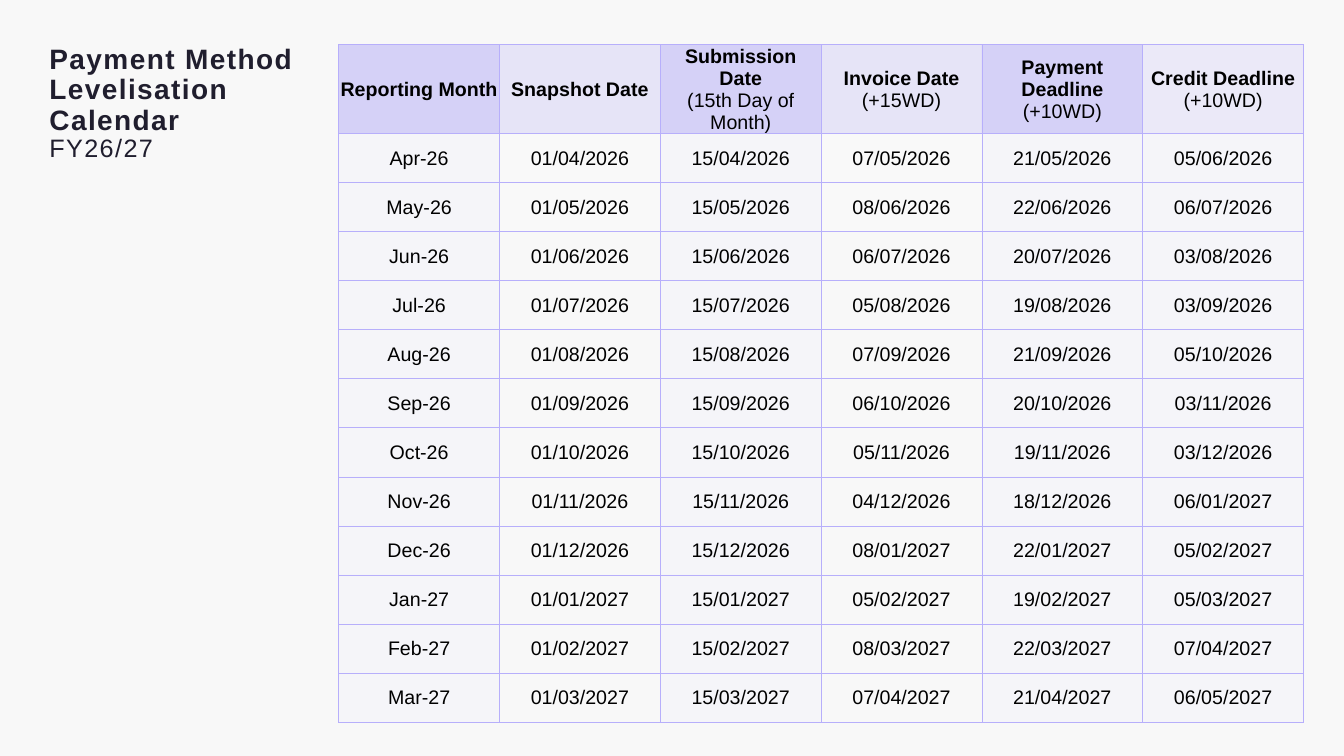
import copy

import pptx
import pptx.dml.color
import pptx.enum.text
import pptx.oxml
import pptx.oxml.ns
import pptx.util
from pptx.util import Inches

RGBColor = pptx.dml.color.RGBColor
BACKGROUND = RGBColor(0xF8, 0xF8, 0xF8)
WHITE = RGBColor(0xFF, 0xFF, 0xFF)
BLACK = RGBColor(0x00, 0x00, 0x00)
INK = RGBColor(0x20, 0x1E, 0x2E)
VIOLET = RGBColor(0x4C, 0x37, 0xF4)
LILAC = RGBColor(0xB7, 0xAF, 0xFB)
PALE_LILAC = RGBColor(0xF0, 0xEF, 0xFE)

# Heading, note below it, fill colour, opacity in percent
HEADINGS = [
    ("Reporting Month", "", VIOLET, 20),
    ("Snapshot Date", "", VIOLET, 10),
    ("Submission Date", "(15th Day of Month)", VIOLET, 20),
    ("Invoice Date", "(+15WD)", VIOLET, 10),
    ("Payment Deadline", "(+10WD)", VIOLET, 20),
    ("Credit Deadline", "(+10WD)", LILAC, 20),
]
MONTHS = "Jan Feb Mar Apr May Jun Jul Aug Sep Oct Nov Dec".split()
FIRST_MONTH, FIRST_YEAR = 4, 2026
# Invoice date, payment deadline, credit deadline
DEADLINES = [
    ("07/05/2026", "21/05/2026", "05/06/2026"),
    ("08/06/2026", "22/06/2026", "06/07/2026"),
    ("06/07/2026", "20/07/2026", "03/08/2026"),
    ("05/08/2026", "19/08/2026", "03/09/2026"),
    ("07/09/2026", "21/09/2026", "05/10/2026"),
    ("06/10/2026", "20/10/2026", "03/11/2026"),
    ("05/11/2026", "19/11/2026", "03/12/2026"),
    ("04/12/2026", "18/12/2026", "06/01/2027"),
    ("08/01/2027", "22/01/2027", "05/02/2027"),
    ("05/02/2027", "19/02/2027", "05/03/2027"),
    ("08/03/2027", "22/03/2027", "07/04/2027"),
    ("07/04/2027", "21/04/2027", "06/05/2027"),
]
PLAIN_COLUMNS = (1, 3)


def calendar_row(index):
    """Texts of one reporting month; the first two dates follow from the month."""
    years, month = divmod(FIRST_MONTH - 1 + index, 12)
    year = FIRST_YEAR + years
    reporting = f"{MONTHS[month]}-{year % 100}"
    fixed_dates = [f"{day}/{month + 1:02}/{year}" for day in ("01", "15")]
    return [reporting, *fixed_dates, *DEADLINES[index]]


def body_fill(row, column):
    """Colour and opacity of a date cell, or no colour for an empty fill."""
    if column not in PLAIN_COLUMNS:
        return PALE_LILAC, 30
    if row < 2:
        return WHITE, 20
    return (BACKGROUND, 100) if row < 5 else (None, 100)


class CalendarSlide:
    font = "Arial"
    border_width = pptx.util.Pt(0.5)

    def __init__(self, presentation):
        self.slide = presentation.slides.add_slide(presentation.slide_layouts[6])
        self.slide.background.fill.solid()
        self.slide.background.fill.fore_color.rgb = BACKGROUND

    def style_runs(self, paragraph, sizes, bolds, color, spacing=None):
        for run, size, bold in zip(paragraph.runs, sizes, bolds):
            run.font.name = self.font
            run.font.size = pptx.util.Pt(size)
            run.font.bold = bold
            run.font.color.rgb = color
            if spacing:
                run.font._element.set("spc", str(spacing))
        # A line break takes the style of the first run, so it adds no height
        for line_break in paragraph._p.findall(pptx.oxml.ns.qn("a:br")):
            line_break.append(copy.deepcopy(paragraph.runs[0].font._element))

    def title(self, heading, period, left, top, width, height):
        frame = self.slide.shapes.add_textbox(left, top, width, height).text_frame
        frame.word_wrap = True
        frame.margin_left = frame.margin_right = 0
        frame.margin_top = frame.margin_bottom = 0
        frame.vertical_anchor = pptx.enum.text.MSO_ANCHOR.BOTTOM
        frame.text = f"{heading}\v{period}"
        frame.paragraphs[0].line_spacing = 0.9
        self.style_runs(frame.paragraphs[0], (20, 18), (True, False), INK, 100)

    def border(self, cell):
        properties = cell._tc.get_or_add_tcPr()
        for side in ("lnL", "lnR", "lnT", "lnB"):
            properties.append(pptx.oxml.parse_xml(
                f'<a:{side} {pptx.oxml.ns.nsdecls("a")} w="{self.border_width}">'
                f'<a:solidFill><a:srgbClr val="{LILAC}"/></a:solidFill></a:{side}>'))

    def fill(self, cell, color, opacity):
        if color is None:
            cell.fill.background()
            return
        cell.fill.solid()
        cell.fill.fore_color.rgb = color
        if opacity < 100:
            value = cell._tc.tcPr.find(
                f"{pptx.oxml.ns.qn('a:solidFill')}/{pptx.oxml.ns.qn('a:srgbClr')}")
            value.append(pptx.oxml.parse_xml(
                f'<a:alpha {pptx.oxml.ns.nsdecls("a")} val="{opacity * 1000}"/>'))

    def cell(self, cell, text, color, opacity, bold=False):
        cell.margin_left = cell.margin_right = cell.margin_top = Inches(0.01)
        cell.margin_bottom = 0
        cell.vertical_anchor = pptx.enum.text.MSO_ANCHOR.MIDDLE
        self.border(cell)
        self.fill(cell, color, opacity)
        cell.text_frame.text = text
        paragraph = cell.text_frame.paragraphs[0]
        paragraph.alignment = pptx.enum.text.PP_ALIGN.CENTER
        self.style_runs(paragraph, (14, 14), (bold, False), BLACK)

    def calendar(self, left, top, width, height, heading_height):
        months = len(DEADLINES)
        table = self.slide.shapes.add_table(
            months + 1, len(HEADINGS), left, top, width, height).table
        table.first_row = table.horz_banding = False
        for column in table.columns:
            column.width = width // len(HEADINGS)
        for row in table.rows:
            row.height = (height - heading_height) // months
        table.rows[0].height = heading_height

        for column, (heading, note, color, opacity) in enumerate(HEADINGS):
            text = f"{heading}\v{note}" if note else heading
            self.cell(table.cell(0, column), text, color, opacity, bold=True)
        for row in range(months):
            for column, text in enumerate(calendar_row(row)):
                self.cell(table.cell(row + 1, column), text, *body_fill(row, column))


def main():
    presentation = pptx.Presentation()
    presentation.slide_width = Inches(13.33)
    presentation.slide_height = Inches(7.5)
    slide = CalendarSlide(presentation)
    slide.calendar(Inches(3.36), Inches(0.44), Inches(9.57), Inches(6.62), Inches(0.78))
    slide.title("Payment Method Levelisation Calendar", "FY26/27",
                Inches(0.49), Inches(0.44), Inches(2.58), Inches(1.18))
    presentation.save("out.pptx")


if __name__ == "__main__":
    main()
